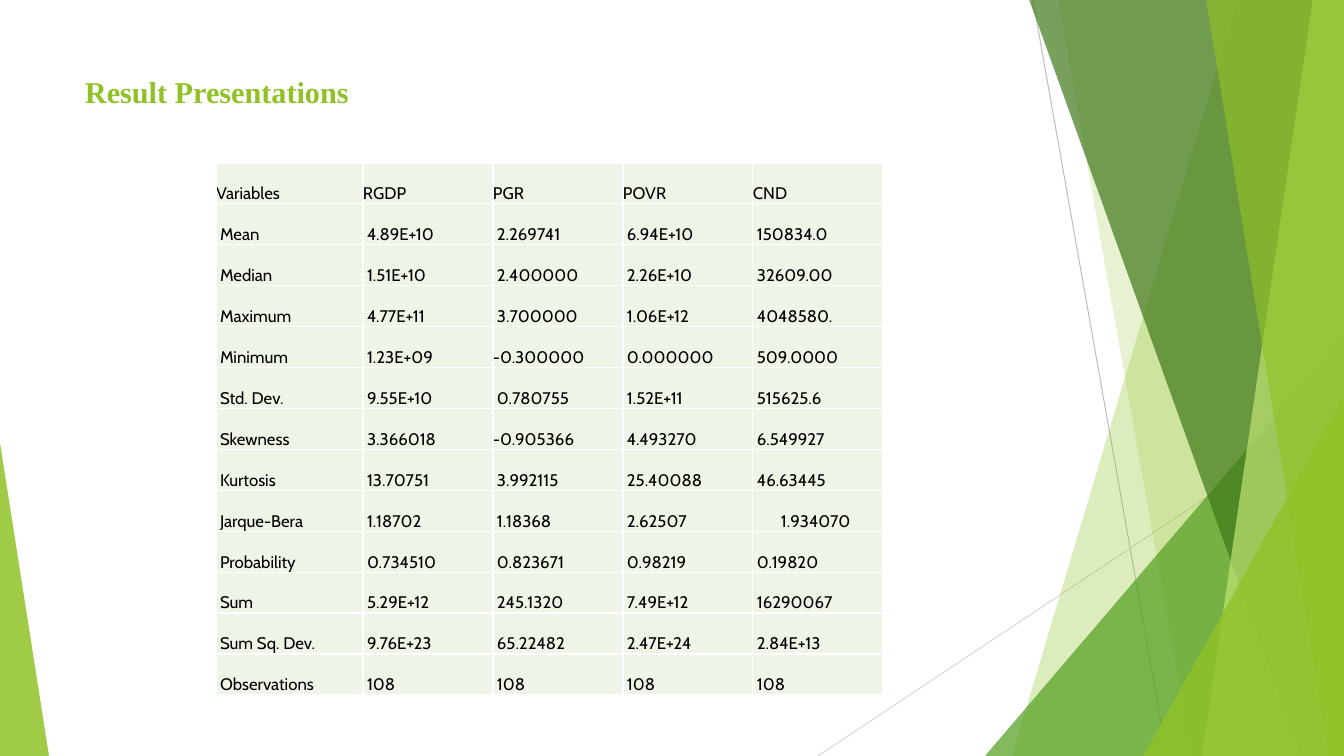
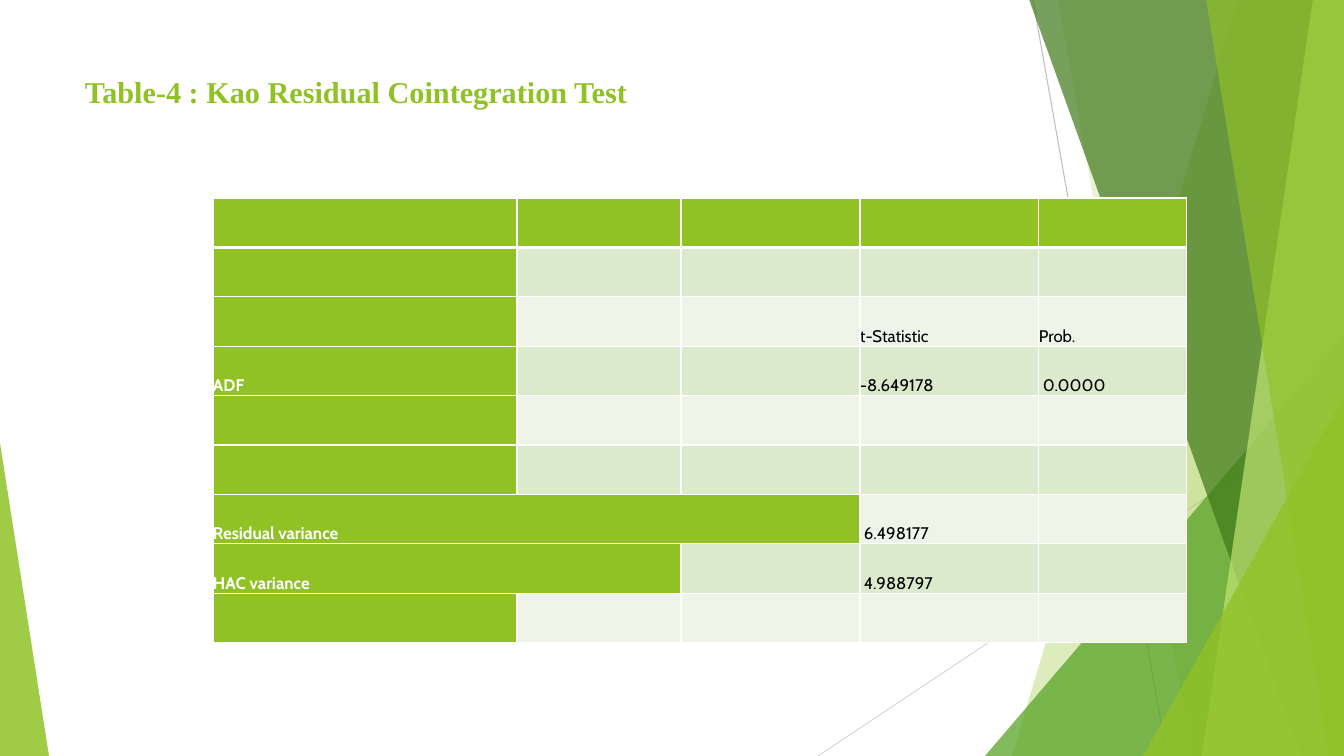
import pptx
import pptx.util
import pptx.dml.color
import pptx.enum.shapes
import pptx.enum.text
import pptx.oxml
import pptx.oxml.ns
from lxml import etree

PX = 914400 / 100.8
WIDTH, HEIGHT = 1344, 756

GREEN, WHITE, BLACK = "90C226", "FFFFFF", "000000"
MIDDLE_GREEN, DARK_GREEN, LIME = "54A021", "3F7819", "C0E474"
BAND, PALE = "DBE9CD", "EEF4E8"

# start, end, colour
RAYS = [((1033, 0), (1167, HEIGHT), "BFBFBF"), ((WIDTH, 406), (818, HEIGHT), "D9D9D9")]

# "panel": top x and bottom x of the slanted left edge, reaching the right margin
# "triangle": left, top, width, height, place of the apex
FACETS = [
    ("panel", (1238, 1012), GREEN, 30),
    ("panel", (1058, 1192), GREEN, 20),
    ("triangle", (985, 336, 359, 420, 1), MIDDLE_GREEN, 72),
    ("panel", (1029, 1301), DARK_GREEN, 70),
    ("panel", (1313, 1202), LIME, 70),
    ("panel", (1206, 1329), GREEN, 65),
    ("triangle", (1143, 396, 201, 360, 1), GREEN, 80),
    ("triangle", (0, 443, 49, 313, 0), GREEN, 85),
]

STATISTICS = [
    ("Variables", "RGDP", "PGR", "POVR", "CND"),
    ("Mean", "4.89E+10", "2.269741", "6.94E+10", "150834.0"),
    ("Median", "1.51E+10", "2.400000", "2.26E+10", "32609.00"),
    ("Maximum", "4.77E+11", "3.700000", "1.06E+12", "4048580."),
    ("Minimum", "1.23E+09", "-0.300000", "0.000000", "509.0000"),
    ("Std. Dev.", "9.55E+10", "0.780755", "1.52E+11", "515625.6"),
    ("Skewness", "3.366018", "-0.905366", "4.493270", "6.549927"),
    ("Kurtosis", "13.70751", "3.992115", "25.40088", "46.63445"),
    ("Jarque-Bera", "1.18702", "1.18368", "2.62507", "1.934070"),
    ("Probability", "0.734510", "0.823671", "0.98219", "0.19820"),
    ("Sum", "5.29E+12", "245.1320", "7.49E+12", "16290067"),
    ("Sum Sq. Dev.", "9.76E+23", "65.22482", "2.47E+24", "2.84E+13"),
    ("Observations", "108", "108", "108", "108"),
]
COINTEGRATION = [
    ("", "", "", "", ""),
    ("", "", "", "", ""),
    ("", "", "", "t-Statistic", "Prob."),
    ("ADF", "", "", "-8.649178", "0.0000"),
    ("", "", "", "", ""),
    ("", "", "", "", ""),
    ("Residual variance", "", "", "6.498177", ""),
    ("HAC variance", "", "", "4.988797", ""),
    ("", "", "", "", ""),
]

NUMBER_INDENT = 4
SLIDES = [
    {
        "title": "Result Presentations", "title_size": (1042, 83),
        "rows": STATISTICS, "position": (216, 163), "height": 532,
        "columns": [147, 130, 130, 130, 130], "merges": [], "headed": False,
        "indents": {(row, 0): NUMBER_INDENT for row in range(1, len(STATISTICS))}
        | {(8, 4): 28},
    },
    {
        "title": "Table-4 : Kao Residual Cointegration Test", "title_size": (1128, 90),
        "rows": COINTEGRATION, "position": (213, 198), "height": 445,
        "columns": [304, 164, 179, 179, 148], "merges": [(6, 2), (7, 1)],
        "headed": True, "indents": {},
    },
]

TITLE_FONT = {"name": "Times New Roman", "size": pptx.util.Pt(21.6), "bold": True}
CELL_FONT = {"name": "Cabin", "size": pptx.util.Pt(12)}
CELL_PARAGRAPH = {
    "alignment": pptx.enum.text.PP_ALIGN.JUSTIFY,
    "line_spacing": 2.0,
    "space_after": pptx.util.Pt(8),
}
CELL_FRAME = {
    "vertical_anchor": pptx.enum.text.MSO_ANCHOR.BOTTOM,
    "margin_left": 0, "margin_top": 0, "margin_right": 0, "margin_bottom": 0,
}


def px(value):
    return pptx.util.Emu(round(value * PX))


def rgb(colour):
    return pptx.dml.color.RGBColor.from_string(colour)


def apply(target, values):
    """Set every attribute named in values on target."""
    for name, value in values.items():
        setattr(target, name, value)


def add_ray(shapes, start, end, colour):
    ray = shapes.add_connector(
        pptx.enum.shapes.MSO_CONNECTOR.STRAIGHT, *map(px, start + end))
    ray.line.color.rgb = rgb(colour)
    ray.line.width = pptx.util.Pt(0.75)
    etree.SubElement(ray.element.spPr, pptx.oxml.ns.qn("a:effectLst"))


def add_facet(shapes, kind, geometry, colour, opacity):
    if kind == "panel":
        top_x, bottom_x = geometry
        builder = shapes.build_freeform(top_x, -1, scale=PX)
        builder.add_line_segments([(WIDTH, -1), (WIDTH, HEIGHT), (bottom_x, HEIGHT)])
        facet = builder.convert_to_shape()
    else:
        *box, apex = geometry
        facet = shapes.add_shape(
            pptx.enum.shapes.MSO_SHAPE.ISOSCELES_TRIANGLE, *map(px, box))
        facet.adjustments[0] = apex
    facet.shadow.inherit = False
    facet.line.fill.background()
    facet.fill.solid()
    facet.fill.fore_color.rgb = rgb(colour)
    fill_colour = facet.element.spPr.find(".//" + pptx.oxml.ns.qn("a:srgbClr"))
    etree.SubElement(fill_colour, pptx.oxml.ns.qn("a:alpha"), val=str(opacity * 1000))


def add_backdrop(slide):
    shapes = slide.shapes.add_group_shape().shapes
    for ray in RAYS:
        add_ray(shapes, *ray)
    for facet in FACETS:
        add_facet(shapes, *facet)


def add_title(slide, text, size):
    frame = slide.shapes.add_textbox(px(75), px(68), *map(px, size)).text_frame
    frame.word_wrap = True
    run = frame.paragraphs[0].add_run()
    run.text = text
    apply(run.font, TITLE_FONT)
    run.font.color.rgb = rgb(GREEN)


def add_borders(cell, widths):
    """Draw white borders; widths maps L, R, T and B to points."""
    properties = cell._tc.get_or_add_tcPr()
    for side, width in widths.items():
        properties.append(pptx.oxml.parse_xml(
            f'<a:ln{side} {pptx.oxml.ns.nsdecls("a")} w="{pptx.util.Pt(width)}">'
            f'<a:solidFill><a:srgbClr val="{WHITE}"/></a:solidFill></a:ln{side}>'))


def write_cell(cell, text, indent, on_green):
    apply(cell, CELL_FRAME)
    paragraph = cell.text_frame.paragraphs[0]
    apply(paragraph, CELL_PARAGRAPH)
    paragraph._p.get_or_add_pPr().set("marL", str(px(indent)))
    run = paragraph.add_run()
    run.text = text
    apply(run.font, CELL_FONT | {"bold": on_green})
    run.font.color.rgb = rgb(WHITE if on_green else BLACK)


def add_data_table(slide, content):
    rows, columns, headed = content["rows"], content["columns"], content["headed"]
    table = slide.shapes.add_table(
        len(rows), len(columns), *map(px, content["position"]),
        px(sum(columns)), px(content["height"])).table
    for column, width in zip(table.columns, columns):
        column.width = px(width)
    for row in table.rows:
        row.height = px(content["height"] / len(rows))
    for row, last_column in content["merges"]:
        table.cell(row, 0).merge(table.cell(row, last_column))

    for row, texts in enumerate(rows):
        for column, text in enumerate(texts):
            cell = table.cell(row, column)
            add_borders(cell, {
                "L": 1, "R": 1,
                "T": 3 if headed and row == 1 else 1,
                "B": 3 if headed and row == 0 else 1,
            })
            on_green = headed and (row == 0 or column == 0 or cell.is_spanned)
            cell.fill.solid()
            cell.fill.fore_color.rgb = rgb(
                GREEN if on_green else BAND if headed and row % 2 else PALE)
            if text:
                usual_indent = NUMBER_INDENT if text[0].isdigit() else 0
                indent = content["indents"].get((row, column), usual_indent)
                write_cell(cell, text, indent, on_green)


def main():
    presentation = pptx.Presentation()
    presentation.slide_width, presentation.slide_height = px(WIDTH), px(HEIGHT)
    for content in SLIDES:
        slide = presentation.slides.add_slide(presentation.slide_layouts[6])
        add_backdrop(slide)
        add_title(slide, content["title"], content["title_size"])
        add_data_table(slide, content)
    presentation.save("out.pptx")


if __name__ == "__main__":
    main()
